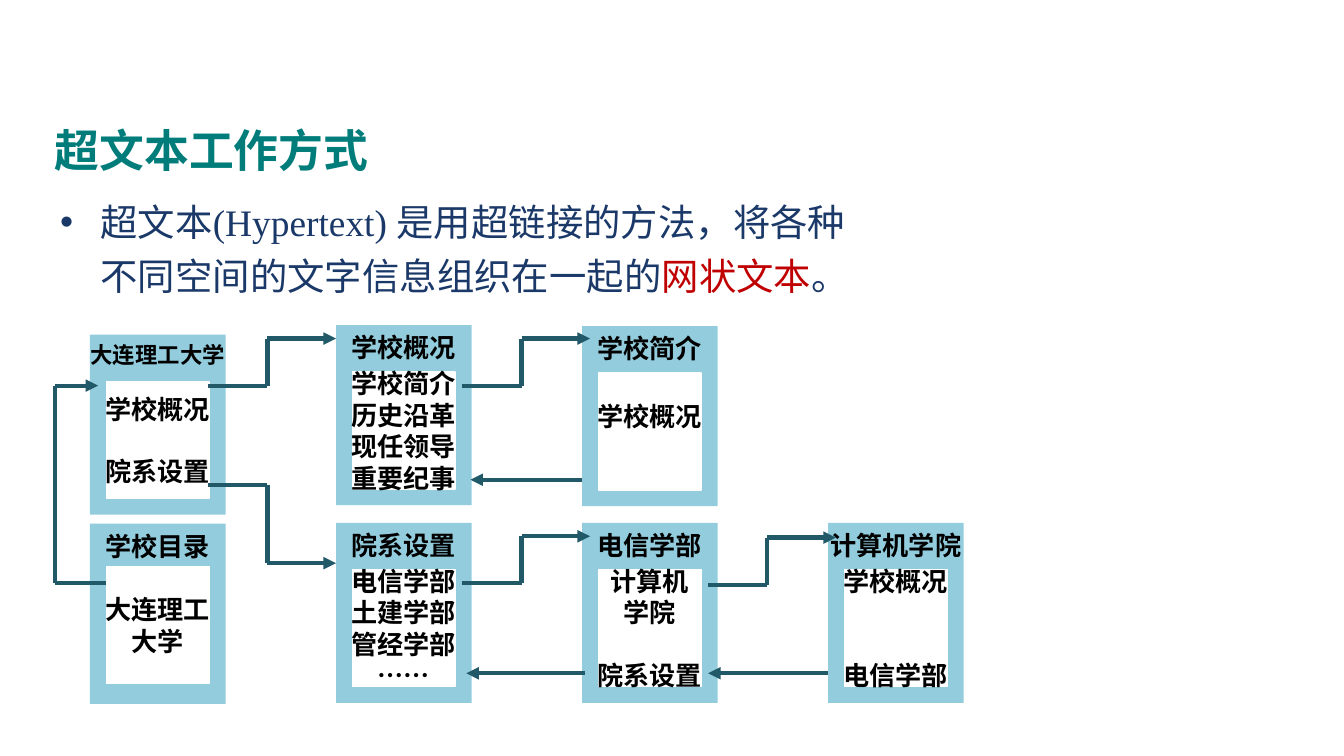
"""Build the slide explaining how hypertext links pages together."""
import itertools

import pptx
import pptx.dml.color
import pptx.enum.shapes
import pptx.enum.text
import pptx.oxml.ns
import pptx.util
from lxml import etree

Pt = pptx.util.Pt
ANCHOR = pptx.enum.text.MSO_ANCHOR
ALIGN = pptx.enum.text.PP_ALIGN
COLORS = {"title": "007D7A", "body": "1A3868", "accent": "C00000", "card": "93CDDD",
          "panel": "FFFFFF", "label": "000000", "link": "215968"}
CJK_FONT = "Noto Sans CJK SC"
LATIN_FONT = "Times New Roman"
COLUMNS = [48.2 + 131.8 * index for index in range(4)]
UPPER, LOWER = 174.2, 280.1
LABEL_SIZE = 14
LINE_RATIO = 1.2


def rgb(name):
    """Return the named colour."""
    return pptx.dml.color.RGBColor.from_string(COLORS[name])


def apply_format(target, values):
    """Set every attribute in the dict on the target."""
    for name, value in values.items():
        setattr(target, name, value)


def add_child(parent, tag, **attributes):
    """Append a DrawingML element to the parent."""
    return etree.SubElement(parent, pptx.oxml.ns.qn(tag), attributes)


def add_span(para, text, size, color, font=CJK_FONT, bold=False):
    """Add one run of styled text."""
    span = para.add_run()
    span.text = text
    apply_format(span.font, {"name": font, "size": Pt(size), "bold": bold})
    span.font.color.rgb = rgb(color)
    add_child(span.font._element, "a:ea", typeface=CJK_FONT)


def add_text_box(page, left, top, width, height, **frame_format):
    """Add a wrapping text box and return its first paragraph."""
    frame = page.shapes.add_textbox(Pt(left), Pt(top), Pt(width), Pt(height)).text_frame
    apply_format(frame, {"word_wrap": True, "vertical_anchor": ANCHOR.MIDDLE, **frame_format})
    return frame.paragraphs[0]


def add_bullet(para, indent):
    """Give the paragraph a hanging round bullet."""
    properties = para._p.get_or_add_pPr()
    properties.set("marL", str(Pt(indent)))
    properties.set("indent", str(-Pt(indent)))
    add_child(properties, "a:buFont", typeface="Arial")
    add_child(properties, "a:buChar", char="•")


def add_label_box(page, left, top, width, height, fill, lines, size=LABEL_SIZE, **frame_format):
    """Add a filled rectangle of centred lines, each with its count of lines of space before."""
    box = page.shapes.add_shape(pptx.enum.shapes.MSO_SHAPE.RECTANGLE,
                                Pt(left), Pt(top), Pt(width), Pt(height))
    box.shadow.inherit = False
    box.fill.solid()
    box.fill.fore_color.rgb = rgb(fill)
    box.line.fill.background()
    frame = box.text_frame
    apply_format(frame, {"word_wrap": False, **frame_format})
    pitch = size * LINE_RATIO
    for index, (text, gap) in enumerate(lines):
        para = frame.add_paragraph() if index else frame.paragraphs[0]
        apply_format(para, {"alignment": ALIGN.CENTER, "line_spacing": Pt(pitch),
                            "space_before": Pt(gap * pitch)})
        add_span(para, text, size, "label", bold=True)
    return box


def add_card(page, left, top, heading, lines, size=LABEL_SIZE, panel_drop=25.2, lift=0):
    """Add a headed card with a white panel of link texts."""
    add_label_box(page, left, top, 72.7, 96.5, "card", [(heading, 0)], size,
                  vertical_anchor=ANCHOR.TOP)
    panel = add_label_box(page, left + 8.8, top + panel_drop, 54.9, 62.6, "panel", lines,
                          vertical_anchor=ANCHOR.MIDDLE, margin_bottom=Pt(3.6 + lift))
    panel.line.color.rgb = rgb("panel")
    panel.line.width = Pt(0.75)


def add_link(page, points):
    """Join the points with straight lines that end in an arrowhead."""
    for start, end in itertools.pairwise(points):
        line = page.shapes.add_connector(pptx.enum.shapes.MSO_CONNECTOR.STRAIGHT,
                                         *map(Pt, (*start, *end)))
        line.line.color.rgb = rgb("link")
        line.line.width = Pt(2.25)
        if end == points[-1]:
            add_child(line.line._get_or_add_ln(), "a:tailEnd", type="triangle")
        add_child(line._element.spPr, "a:effectLst")


def add_step(page, left, top, shift, run=68.4):
    """Add a stepped link that moves right and shifts vertically on the way."""
    bend = left + 31.7
    add_link(page, [(left, top), (bend, top), (bend, top + shift), (left + run, top + shift)])


def main():
    """Build and save the deck."""
    deck = pptx.Presentation()
    apply_format(deck, {"slide_width": Pt(720), "slide_height": Pt(405)})
    page = deck.slides.add_slide(deck.slide_layouts[6])

    title = add_text_box(page, 22.3, 56.2, 254.9, 48.2)
    add_span(title, "超文本工作方式", 24, "title", LATIN_FONT, True)

    body = add_text_box(page, 25.2, 95.8, 441.4, 65.5, margin_top=Pt(8))
    add_bullet(body, 21.6)
    body.line_spacing = Pt(28.7)
    for text, color in [("超文本(Hypertext) 是用超链接的方法，将各种不同空间的文字信息组织在一起的", "body"),
                        ("网状文本", "accent"), ("。", "body")]:
        add_span(body, text, 20, color, LATIN_FONT)

    first, second, third, fourth = COLUMNS
    add_card(page, first, 179.3, "大连理工大学", [("学校概况", 0), ("院系设置", 1)], size=12)
    add_card(page, second, UPPER, "学校概况",
             [("学校简介", 0), ("历史沿革", 0), ("现任领导", 0), ("重要纪事", 0)])
    add_card(page, third, UPPER + 0.5, "学校简介", [("学校概况", 0)], lift=LABEL_SIZE * LINE_RATIO)
    add_card(page, first, LOWER + 0.5, "学校目录", [("大连理工", 0), ("大学", 0)], panel_drop=23)
    add_card(page, second, LOWER, "院系设置",
             [("电信学部", 0), ("土建学部", 0), ("管经学部", 0), ("……", 0)])
    add_card(page, third, LOWER, "电信学部", [("计算机", 0), ("学院", 0), ("院系设置", 1)])
    add_card(page, fourth, LOWER, "计算机学院", [("学校概况", 0), ("电信学部", 2)])

    add_link(page, [(56.9, 312.5), (29.7, 312.5), (29.7, 206.6), (52.6, 206.6)])
    for left, top, shift in [(111.6, 206.6, -25.2), (111.6, 259.9, 41.8), (247.7, 206.6, -25.2),
                             (247.7, 312.5, -25.2), (379.4, 313.2, -25.2)]:
        add_step(page, left, top, shift)
    for start, end, top in [(third, 252, 257), (fourth, 379.4, 360.7), (313.2, 249.8, 360.7)]:
        add_link(page, [(start, top), (end, top)])

    deck.save("out.pptx")


if __name__ == "__main__":
    main()
